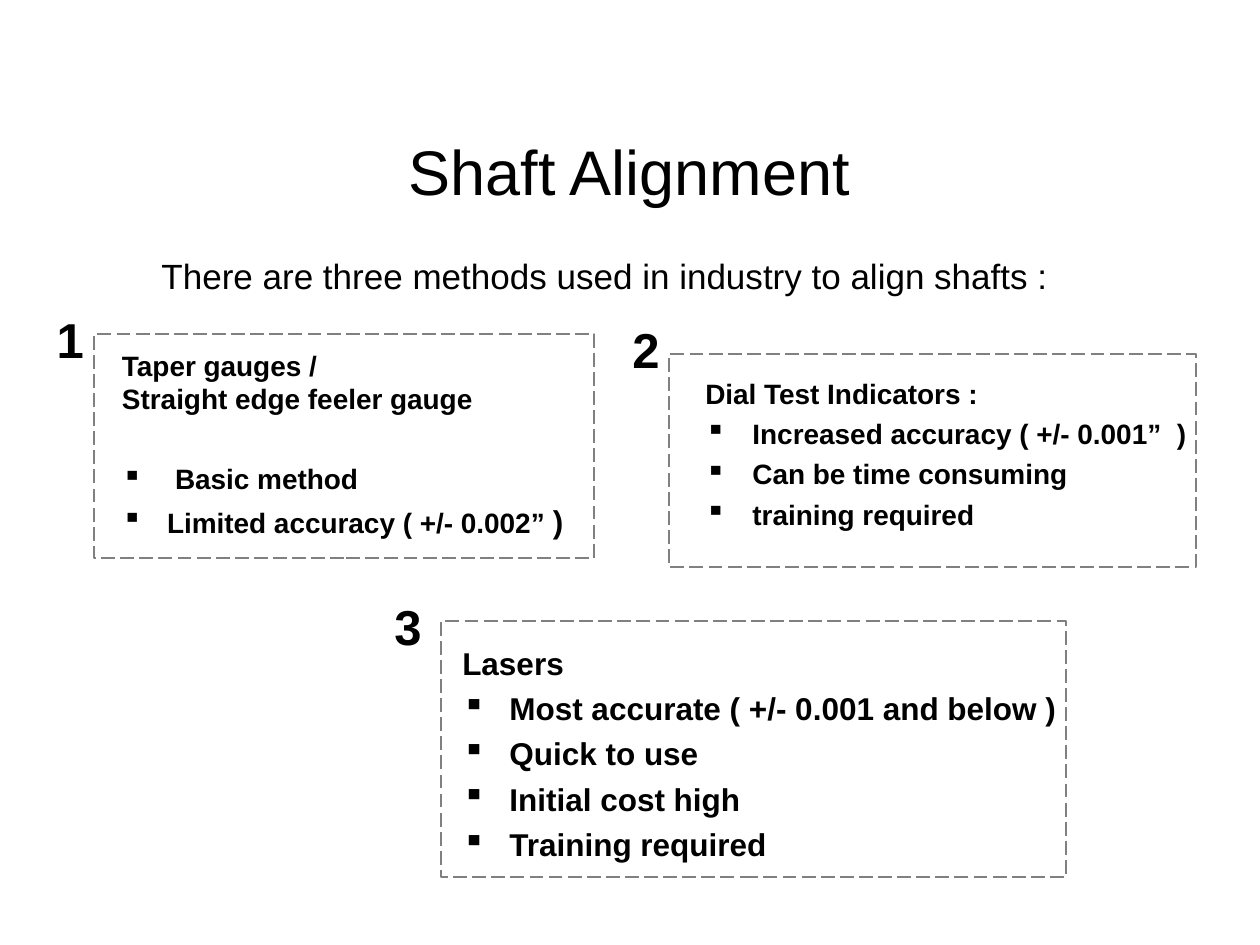
from dataclasses import dataclass

from lxml.etree import SubElement
from pptx import Presentation
from pptx.dml.color import RGBColor
from pptx.enum.dml import MSO_LINE
from pptx.enum.shapes import MSO_SHAPE
from pptx.enum.text import MSO_ANCHOR, MSO_AUTO_SIZE, PP_ALIGN
from pptx.oxml.ns import qn
from pptx.util import Cm, Pt


@dataclass(frozen=True)
class Theme:
    """Colours, font and type sizes of the slide."""
    font: str = "Arial"
    ink: RGBColor = RGBColor(0x00, 0x00, 0x00)
    outline: RGBColor = RGBColor(0x80, 0x80, 0x80)
    title: int = 36
    lead: int = 20
    number: int = 28
    large: int = 18
    small: int = 16
    spacing: float = 0.24
    hanging: float = 0.95


THEME = Theme()


def write_text(paragraph, text, size=THEME.small, bold=False):
    """Append formatted text, with a line break at each newline."""
    for index, line in enumerate(text.split("\n")):
        if index:
            paragraph.add_line_break()
            line_break = paragraph._p.findall(qn("a:br"))[-1]
            SubElement(line_break, qn("a:rPr"), sz=str(size * 100))
        run = paragraph.add_run()
        run.text = line
        run.font.name = THEME.font
        run.font.size = Pt(size)
        run.font.bold = bold
        run.font.color.rgb = THEME.ink


def set_bullet(paragraph, indent, character=None):
    """Give a paragraph a hanging indent and a bullet, or no bullet."""
    properties = paragraph._p.get_or_add_pPr()
    properties.set("marL", str(Cm(indent)))
    properties.set("indent", str(-Cm(indent)))
    if character:
        SubElement(properties, qn("a:buChar"), char=character)
    else:
        SubElement(properties, qn("a:buNone"))


def place(shape, left, top, width, height):
    """Move and size a shape in centimetres."""
    shape.left, shape.top = Cm(left), Cm(top)
    shape.width, shape.height = Cm(width), Cm(height)


def fill_placeholder(placeholder, text, size, bounds, anchor, alignment):
    """Place a template placeholder and write its single paragraph."""
    place(placeholder, *bounds)
    frame = placeholder.text_frame
    frame.auto_size = MSO_AUTO_SIZE.NONE
    frame.vertical_anchor = anchor
    paragraph = frame.paragraphs[0]
    set_bullet(paragraph, 0)
    paragraph.alignment = alignment
    paragraph.space_before = Pt(0)
    write_text(paragraph, text, size=size)


def add_text_frame(shapes, bounds):
    """Add a wrapping text box and return its text frame."""
    frame = shapes.add_textbox(*map(Cm, bounds)).text_frame
    frame.word_wrap = True
    return frame


def add_number(slide, number, left, top):
    """Add the large number beside a method."""
    frame = add_text_frame(slide.shapes, (left, top, 0.8, 1.45))
    write_text(frame.paragraphs[0], number, size=THEME.number, bold=True)


def add_outline(shapes, bounds):
    """Add a dashed rectangle without fill."""
    outline = shapes.add_shape(MSO_SHAPE.RECTANGLE, *map(Cm, bounds))
    outline.shadow.inherit = False
    outline.fill.background()
    outline.line.color.rgb = THEME.outline
    outline.line.width = Pt(1)
    outline.line.dash_style = MSO_LINE.LONG_DASH


def add_method(slide, heading, points, text_bounds, outline_bounds,
               size=THEME.small, indents=None, gap=None):
    """Add a grouped method panel and return its last paragraph."""
    shapes = slide.shapes.add_group_shape().shapes
    frame = add_text_frame(shapes, text_bounds)
    paragraph = frame.paragraphs[0]
    write_text(paragraph, heading, size=size, bold=True)
    indents = indents or [THEME.hanging] * len(points)
    spacing = size * THEME.spacing
    for index, (point, indent) in enumerate(zip(points, indents)):
        paragraph = frame.add_paragraph()
        set_bullet(paragraph, indent, "▪")
        paragraph.space_before = Pt(gap if gap and index == 0 else spacing)
        write_text(paragraph, point, size=size, bold=True)
    add_outline(shapes, outline_bounds)
    return paragraph


def main():
    """Build the shaft alignment slide."""
    presentation = Presentation()
    presentation.slide_width, presentation.slide_height = Cm(25.4), Cm(19.05)
    slide = presentation.slides.add_slide(presentation.slide_layouts[1])
    title, body = slide.placeholders
    fill_placeholder(title, "Shaft Alignment", THEME.title,
                     (3.38, 2.06, 18.62, 2.74), MSO_ANCHOR.MIDDLE, PP_ALIGN.CENTER)
    fill_placeholder(body, "There are three methods used in industry to align shafts :",
                     THEME.lead, (3, 5, 19.48, 1.45), MSO_ANCHOR.TOP, PP_ALIGN.LEFT)

    accuracy = add_method(
        slide, "Taper gauges /\nStraight edge feeler gauge",
        ["Basic method", "Limited accuracy ( +/- 0.002” "],
        (2.21, 6.9, 10.13, 4.27), (1.9, 6.73, 10.08, 4.52),
        indents=[1.07, 0.91], gap=26.5)
    write_text(accuracy, ")", size=THEME.large, bold=True)
    add_method(
        slide, "Lasers",
        ["Most accurate ( +/- 0.001 and below )", "Quick to use",
         "Initial cost high", "Training required"],
        (9.07, 12.85, 12.65, 5.28), (8.89, 12.52, 12.6, 5.16), size=THEME.large)
    add_method(
        slide, "Dial Test Indicators :",
        ["Increased accuracy ( +/- 0.001”  )", "Can be time consuming",
         "training required"],
        (13.97, 7.46, 10.74, 4.09), (13.49, 7.14, 10.62, 4.29))

    for number, left, top in (("1", 0.89, 6.12), ("2", 12.5, 6.32), ("3", 7.7, 11.91)):
        add_number(slide, number, left, top)
    presentation.save("out.pptx")


if __name__ == "__main__":
    main()
